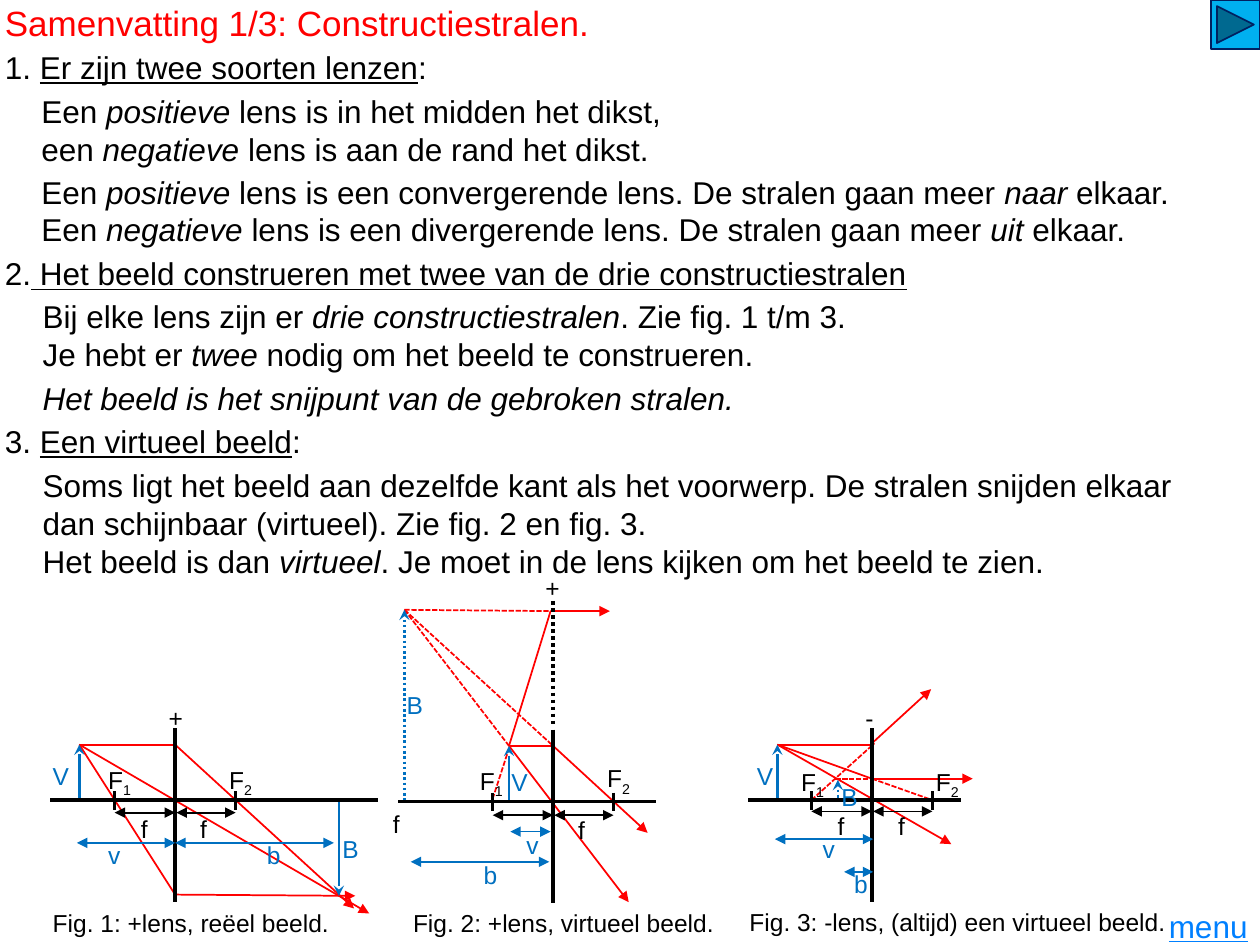
from lxml.etree import SubElement
from pptx import Presentation
from pptx.dml.color import RGBColor
from pptx.enum.dml import MSO_LINE
from pptx.enum.shapes import MSO_CONNECTOR, MSO_SHAPE
from pptx.enum.text import MSO_ANCHOR, PP_ALIGN
from pptx.oxml.ns import qn
from pptx.util import Inches, Pt

COLORS = {"black": "000000", "red": "FF0000", "blue": "0070C0", "link": "0080FF",
          "button": "00B0F0", "border": "002060", "white": "FFFFFF"}
DASH, DOT = MSO_LINE.SQUARE_DOT, MSO_LINE.ROUND_DOT


def rgb(name):
    """Return the named colour."""
    return RGBColor.from_string(COLORS[name])


def add_text(slide, text, box, size=18, color="black", emphasis="italic", margin=0,
             align=PP_ALIGN.LEFT, anchor=MSO_ANCHOR.TOP):
    """Place text in a box, with the emphasis on the parts between asterisks."""
    frame = slide.shapes.add_textbox(*map(Inches, box)).text_frame
    frame.word_wrap = True
    frame.vertical_anchor = anchor
    for index, content in enumerate(text.split("\n")):
        paragraph = frame.add_paragraph() if index else frame.paragraphs[0]
        paragraph.alignment = align
        if margin:
            paragraph._p.get_or_add_pPr().set("marL", str(Inches(margin)))
        for position, part in enumerate(content.split("*")):
            if not part:
                continue
            run = paragraph.add_run()
            run.text = part
            run.font.name = "Arial"
            run.font.size = Pt(size)
            run.font.color.rgb = rgb(color)
            if position % 2 == 0:
                continue
            if emphasis == "subscript":
                run._r.get_or_add_rPr().set("baseline", "-25000")
            else:
                setattr(run.font, emphasis, True)


def add_line(slide, center, start, end, color="red", width=1, dash=None, head=None, tail=None):
    """Draw a line between two points measured from the centre."""
    points = [Inches(base + offset) for point in (start, end) for base, offset in zip(center, point)]
    connector = slide.shapes.add_connector(MSO_CONNECTOR.STRAIGHT, *points)
    SubElement(connector._element.spPr, qn("a:effectLst"))
    connector.line.color.rgb = rgb(color)
    connector.line.width = Pt(width)
    if dash:
        connector.line.dash_style = dash
    outline = connector.line._get_or_add_ln()
    for tag, kind in (("a:headEnd", head), ("a:tailEnd", tail)):
        if kind:
            SubElement(outline, qn(tag)).set("type", kind)


def add_label(slide, center, text, x, y, color="black", width=0.47):
    """Write a label at an offset from the centre."""
    add_text(slide, text, (center[0] + x, center[1] + y, width, 0.34), 14, color, "subscript")


def add_distance(slide, center, start, end, y, color="blue"):
    """Draw a horizontal double arrow."""
    add_line(slide, center, (start, y), (end, y), color, head="triangle", tail="triangle")


def add_upright(slide, center, x, tip, foot=0, dash=None):
    """Draw the arrow of an object or an image."""
    add_line(slide, center, (x, tip), (x, foot), "blue", 1.5, dash, head="stealth")


def add_rays(slide, center, rays, dash=None, tail=None):
    """Draw light rays of one style."""
    for start, end in rays:
        add_line(slide, center, start, end, dash=dash, tail=tail)


def add_lens(slide, center, axis, focal_y):
    """Draw the lens, the axis, the focal points and the focal distances."""
    add_line(slide, center, (0, -0.57), (0, 0.81), "black", 2)
    add_line(slide, center, (axis[0], 0), (axis[1], 0), "black", 2)
    for x in (-0.48, 0.48):
        add_line(slide, center, (x, -0.07), (x, 0.08), "black", 2)
    add_distance(slide, center, -0.48, 0, focal_y, "black")
    add_distance(slide, center, 0.01, 0.48, focal_y, "black")


def add_labels(slide, center, blacks, blues):
    """Write the black and the blue labels of a figure."""
    for color, labels in (("black", blacks), ("blue", blues)):
        for text, x, y in labels:
            add_label(slide, center, text, x, y, color)


def add_real_image(slide, center):
    """Draw figure 1."""
    tip = (-0.76, -0.44)
    add_rays(slide, center, [(tip, (0, 0.75)), (tip, (0, -0.44))])
    add_rays(slide, center, [((0.01, 0.75), (1.43, 0.76)), (tip, (1.54, 0.9)),
                             ((0, -0.44), (1.42, 0.86))], tail="triangle")
    add_upright(slide, center, 1.3, 0.76, 0.01)
    add_upright(slide, center, *tip)
    add_lens(slide, center, (-0.99, 1.61), 0.1)
    add_distance(slide, center, -0.78, 0, 0.34)
    add_distance(slide, center, 0, 1.26, 0.34)
    add_labels(slide, center,
               [("F*1*", -0.63, -0.33), ("F*2*", 0.33, -0.33), ("f", -0.37, 0.06),
                ("f", 0.1, 0.06), ("+", -0.15, -0.82)],
               [("V", -1.07, -0.36), ("B", 1.23, 0.22), ("b", 0.63, 0.27), ("v", -0.63, 0.27)])
    add_label(slide, center, "Fig. 1: +lens, reëel beeld.", -1.07, 0.81, width=2.61)


def add_magnified_image(slide, center):
    """Draw figure 2."""
    tip, image = (-0.35, -0.44), (-1.18, -1.52)
    add_rays(slide, center, [(image, (0, -0.44)), (image, tip), (image, (0, -1.51)),
                             ((-0.48, -0.02), (-0.36, -0.39))], dash=DASH)
    add_rays(slide, center, [(tip, (0, -0.44)), (tip, (-0.02, -1.51))])
    add_rays(slide, center, [(tip, (0.6, 0.8)), ((0, -0.44), (0.75, 0.25)),
                             ((0, -1.51), (0.45, -1.51))], tail="triangle")
    add_upright(slide, center, *image, dash=DOT)
    add_upright(slide, center, *tip)
    add_lens(slide, center, (-1.23, 0.82), 0.11)
    add_line(slide, center, (0, -1.59), (0, -0.61), "black", 2, DOT)
    add_distance(slide, center, -0.34, -0.02, 0.24)
    add_distance(slide, center, -1.13, -0.03, 0.48)
    add_labels(slide, center,
               [("F*1*", -0.68, -0.33), ("F*2*", 0.33, -0.35), ("f", -1.37, 0.01),
                ("f", 0.1, 0.06), ("+", -0.16, -1.86)],
               [("V", -0.43, -0.32), ("B", -1.26, -0.93), ("b", -0.65, 0.42), ("v", -0.31, 0.18)])
    add_label(slide, center, "Fig. 2: +lens, virtueel beeld.", -1.21, 0.8, width=2.73)


def add_reduced_image(slide, center):
    """Draw figure 3."""
    tip = (-0.75, -0.44)
    add_rays(slide, center, [(tip, (0, -0.44)), (tip, (0, -0.17))])
    add_rays(slide, center, [((0, -0.45), (0.47, -0.88)), (tip, (0.63, 0.35)),
                             ((0.01, -0.17), (0.8, -0.17))], tail="triangle")
    add_rays(slide, center, [((0, -0.17), (0.48, 0)), ((-0.29, -0.17), (0, -0.17)),
                             ((-0.48, 0), (0.02, -0.45))], dash=DASH)
    add_upright(slide, center, -0.27, -0.16, dash=DOT)
    add_upright(slide, center, *tip)
    add_lens(slide, center, (-0.98, 0.71), 0.09)
    add_distance(slide, center, -0.77, 0.01, 0.31)
    add_distance(slide, center, -0.22, 0.01, 0.57)
    add_labels(slide, center,
               [("F*1*", -0.66, -0.31), ("F*2*", 0.41, -0.31), ("f", -0.37, 0.04),
                ("f", 0.11, 0.04), ("-", -0.15, -0.82)],
               [("V", -1.01, -0.36), ("B", -0.34, -0.19), ("b", -0.24, 0.5), ("v", -0.49, 0.22)])
    add_label(slide, center, "Fig. 3: -lens, (altijd) een virtueel beeld.", -1.07, 0.8, width=3.63)


def add_summary(slide, left):
    """Write the title, the numbered headings and their explanations."""
    add_text(slide, "Samenvatting 1/3: Constructiestralen.", (left, -0.04, 8.6, 0.44), 20, "red")
    headings = [("1. *Er zijn twee soorten lenzen*:", 0.33, 8.19),
                ("2.* Het beeld construeren met twee van de drie constructiestralen*", 1.97, 7.42),
                ("3. *Een virtueel beeld*:", 3.3, 7.28)]
    for text, top, width in headings:
        add_text(slide, text, (left, top, width, 0.4), emphasis="underline")
    explanations = [
        ("Een *positieve* lens is in het midden het dikst,\n"
         "een *negatieve* lens is aan de rand het dikst.", 0.68, 9.8, 0.71),
        ("Een *positieve* lens is een convergerende lens. De stralen gaan meer *naar* elkaar.\n"
         "Een *negatieve *lens is een divergerende lens. De stralen gaan meer *uit* elkaar.",
         1.32, 9.8, 0.71),
        ("Bij elke lens zijn er *drie constructiestralen*. Zie fig. 1 t/m 3.\n"
         "Je hebt er *twee* nodig om het beeld te construeren.", 2.31, 6.94, 0.71),
        ("*Het beeld is het snijpunt van de gebroken stralen.*", 2.96, 6.04, 0.4),
        ("Soms ligt het beeld aan dezelfde kant als het voorwerp. De stralen snijden elkaar "
         "dan schijnbaar (virtueel). Zie fig. 2 en fig. 3.\n"
         "Het beeld is dan *virtueel*. Je moet in de lens kijken om het beeld te zien.",
         3.65, 9.78, 1.01)]
    for text, top, width, height in explanations:
        add_text(slide, text, (left, top, width, height), margin=0.29 if top < 2 else 0.3)


def add_navigation(slide, right):
    """Place the next button and the menu text against the right edge."""
    button = slide.shapes.add_shape(MSO_SHAPE.ACTION_BUTTON_FORWARD_OR_NEXT,
                                    *map(Inches, (right - 0.39, 0, 0.39, 0.39)))
    button.shadow.inherit = False
    button.fill.solid()
    button.fill.fore_color.rgb = rgb("button")
    button.line.color.rgb = rgb("border")
    button.line.width = Pt(1)
    add_text(slide, "*menu*", (right - 0.94, 7.19, 0.94, 0.31), color="link",
             emphasis="underline", align=PP_ALIGN.RIGHT, anchor=MSO_ANCHOR.MIDDLE)


def main():
    """Build and save the slide."""
    presentation = Presentation()
    presentation.slide_width, presentation.slide_height = Inches(10), Inches(7.5)
    slide = presentation.slides.add_slide(presentation.slide_layouts[6])
    slide.background.fill.solid()
    slide.background.fill.fore_color.rgb = rgb("white")
    add_navigation(slide, 10)
    add_real_image(slide, (1.39, 6.35))
    add_reduced_image(slide, (6.92, 6.35))
    add_magnified_image(slide, (4.39, 6.36))
    add_summary(slide, -0.06)
    presentation.save("out.pptx")


if __name__ == "__main__":
    main()
